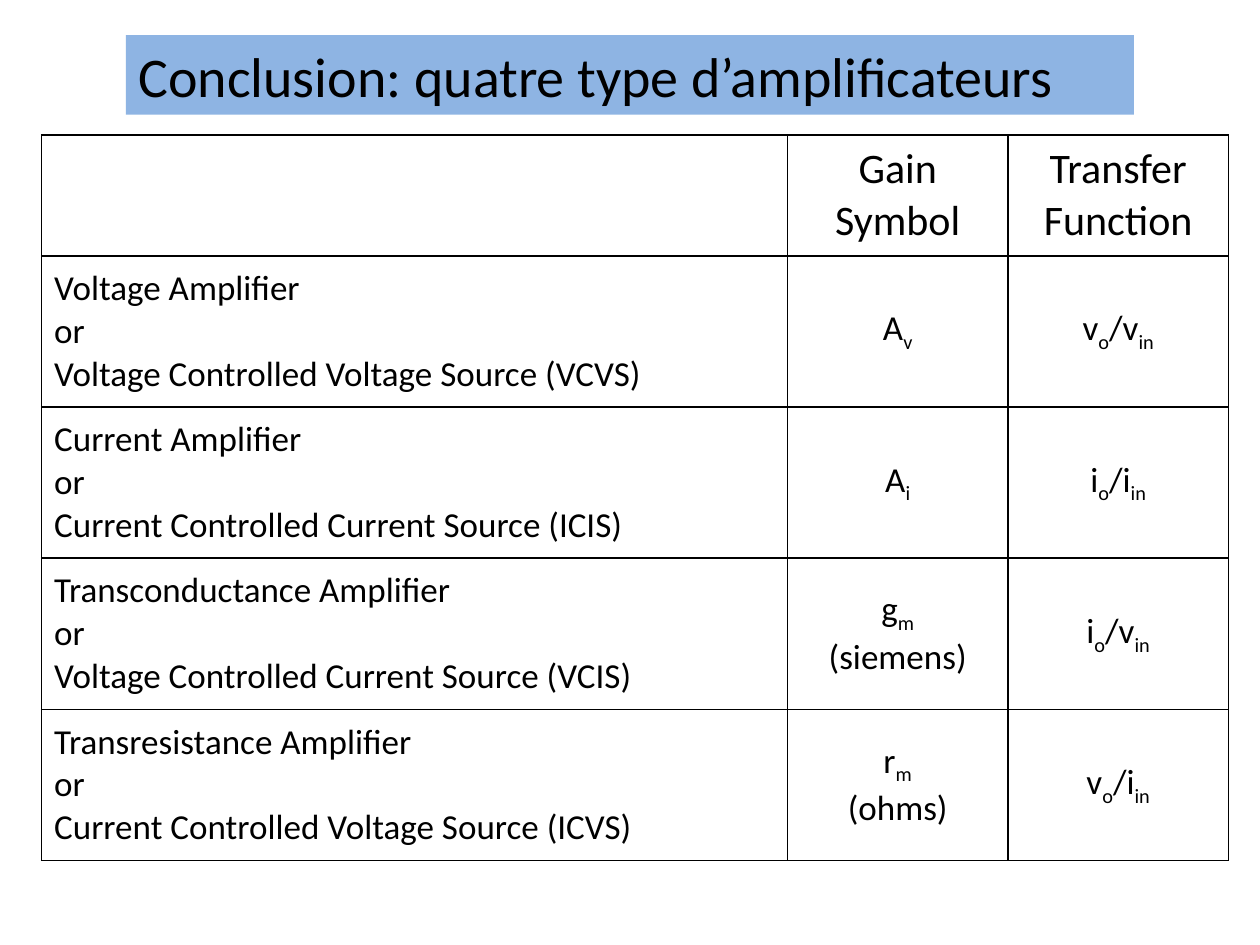
from dataclasses import dataclass

from lxml import etree
from pptx import Presentation
from pptx.dml.color import RGBColor
from pptx.enum.text import MSO_ANCHOR, PP_ALIGN
from pptx.oxml.ns import qn
from pptx.util import Inches, Pt


@dataclass(frozen=True)
class Theme:
    font: str = "Calibri"
    text: str = "000000"
    banner: str = "8EB4E3"
    border: str = "000000"
    title_size: int = 32
    header_size: int = 24
    body_size: int = 20
    border_width: int = 1
    subscript: str = "-25000"


class SlideBuilder:
    def __init__(self, slide, theme):
        self.slide = slide
        self.theme = theme

    def format_run(self, r, size):
        r.font.name = self.theme.font
        r.font.size = Pt(size)
        r.font.color.rgb = RGBColor.from_string(self.theme.text)

    def banner(self, text, left, top, width, height):
        sp = self.slide.shapes.add_textbox(
            Inches(left), Inches(top), Inches(width), Inches(height))
        sp.fill.solid()
        sp.fill.fore_color.rgb = RGBColor.from_string(self.theme.banner)
        tf = sp.text_frame
        tf.word_wrap = True
        tf.text = text
        self.format_run(tf.paragraphs[0].runs[0], self.theme.title_size)

    def borders(self, cell):
        tc_pr = cell._tc.get_or_add_tcPr()
        for side in ("a:lnL", "a:lnR", "a:lnT", "a:lnB"):
            ln = etree.SubElement(
                tc_pr, qn(side), w=str(Pt(self.theme.border_width)))
            fill = etree.SubElement(ln, qn("a:solidFill"))
            etree.SubElement(fill, qn("a:srgbClr"), val=self.theme.border)

    def cell(self, cell, lines, size, align):
        self.borders(cell)
        cell.fill.background()
        cell.vertical_anchor = MSO_ANCHOR.MIDDLE
        tf = cell.text_frame
        for i, line in enumerate(lines):
            p = tf.add_paragraph() if i else tf.paragraphs[0]
            p.alignment = align
            for j, part in enumerate(line.split("|")):
                if not part:
                    continue
                r = p.add_run()
                r.text = part
                self.format_run(r, size)
                if j % 2:
                    r.font._element.set("baseline", self.theme.subscript)

    def table(self, rows, left, top, widths, heights):
        table = self.slide.shapes.add_table(
            len(rows), len(widths), Inches(left), Inches(top),
            Inches(sum(widths)), Inches(sum(heights))).table
        table.first_row = False
        table.horz_banding = False
        for column, width in zip(table.columns, widths):
            column.width = Inches(width)
        for i, (row, height) in enumerate(zip(rows, heights)):
            table.rows[i].height = Inches(height)
            size = self.theme.body_size if i else self.theme.header_size
            for j, lines in enumerate(row):
                align = PP_ALIGN.CENTER if j else PP_ALIGN.LEFT
                self.cell(table.cell(i, j), lines, size, align)


AMPLIFIERS = [
    ("Voltage", "Voltage Controlled Voltage Source (VCVS)",
     ["A|v"], "v|o|/v|in"),
    ("Current", "Current Controlled Current Source (ICIS)",
     ["A|i"], "i|o|/i|in"),
    ("Transconductance", "Voltage Controlled Current Source (VCIS)",
     ["g|m", "(siemens)"], "i|o|/v|in"),
    ("Transresistance", "Current Controlled Voltage Source (ICVS)",
     ["r|m", "(ohms)"], "v|o|/i|in"),
]


def main():
    prs = Presentation()
    prs.slide_width, prs.slide_height = Inches(10), Inches(7.5)
    s = SlideBuilder(prs.slides.add_slide(prs.slide_layouts[6]), Theme())

    s.banner("Conclusion: quatre type d’amplificateurs", 1, 0.28, 8, 0.63)
    rows = [([], ["Gain Symbol"], ["Transfer Function"])]
    for name, source, gain, transfer in AMPLIFIERS:
        rows.append(([f"{name} Amplifier", "or", source], gain, [transfer]))
    s.table(rows, 0.33, 1.07, [5.92, 1.75, 1.75],
            [0.96] + [1.2] * len(AMPLIFIERS))

    prs.save("out.pptx")


if __name__ == "__main__":
    main()
